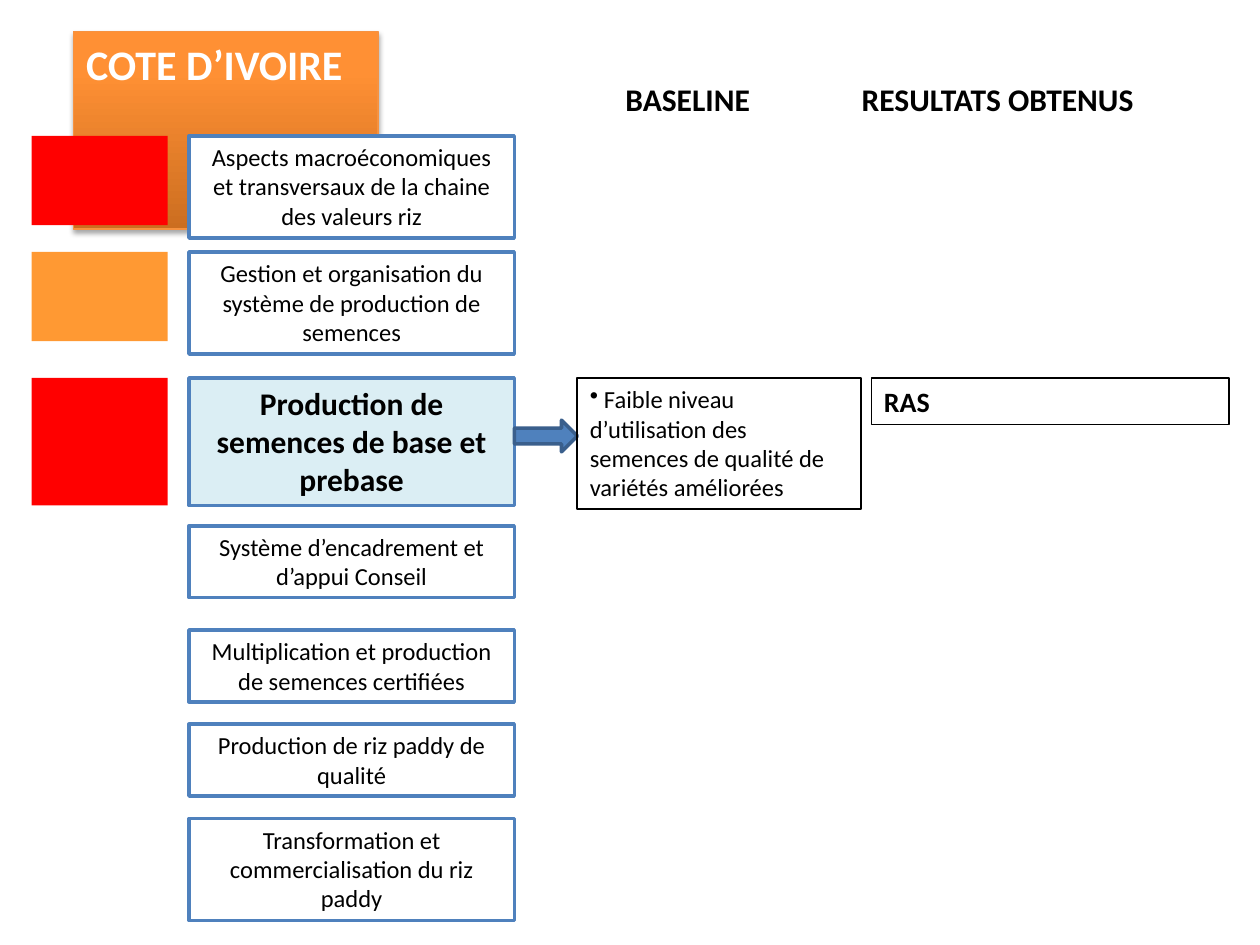
from copy import deepcopy
from lxml import etree
from pptx import Presentation
from pptx.dml.color import RGBColor
from pptx.enum.shapes import MSO_SHAPE
from pptx.enum.text import MSO_ANCHOR, MSO_AUTO_SIZE, PP_ALIGN
from pptx.oxml.ns import qn
from pptx.util import Cm, Pt

RECT, ARROW = MSO_SHAPE.RECTANGLE, MSO_SHAPE.RIGHT_ARROW
LEFT, CENTER = PP_ALIGN.LEFT, PP_ALIGN.CENTER
TOP, GROW = MSO_ANCHOR.TOP, MSO_AUTO_SIZE.SHAPE_TO_FIT_TEXT

BLACK = RGBColor(0x00, 0x00, 0x00)
WHITE = RGBColor(0xFF, 0xFF, 0xFF)
RED = RGBColor(0xFF, 0x00, 0x00)
AMBER = RGBColor(0xFF, 0x99, 0x33)
BLUE = RGBColor(0x4F, 0x81, 0xBD)
NAVY = RGBColor(0x3A, 0x5F, 0x8C)
PALE = RGBColor(0xDB, 0xEE, 0xF4)
RIM = RGBColor(0xF6, 0x92, 0x40)
BLEND = [(0, RGBColor(0xCC, 0x6E, 0x20)),
         (0.8, RGBColor(0xFF, 0x90, 0x34)),
         (1, RGBColor(0xFF, 0x91, 0x36))]

# Content
TITLE = "COTE D’IVOIRE"
# Themes: text, top, height, flag colour, flag height (cm)
THEMES = [
    ("Aspects macroéconomiques et transversaux de la chaine des valeurs riz",
     2.74, 2.06, RED, 1.8),
    ("Gestion et organisation du système de production de semences",
     5.08, 2.06, AMBER, 1.8),
    ("Production de semences de base et prebase", 7.62, 2.57, RED, 2.57),
    ("Système d’encadrement et d’appui Conseil", 10.6, 1.45, None, 0),
    ("Multiplication et production de semences certifiées",
     12.7, 1.45, None, 0),
    ("Production de riz paddy de qualité", 14.6, 1.45, None, 0),
    ("Transformation et commercialisation du riz paddy",
     16.5, 2.06, None, 0),
]
FOCUS = 2
# Heads: text, left, width (cm)
HEADS = [("BASELINE", 11.64, 4.45), ("RESULTATS OBTENUS", 16.09, 8.04)]
BASE = " Faible niveau d’utilisation des semences de qualité de variétés améliorées"
RESULT = "RAS"

# Text formats
BODY = {"name": "Calibri", "size": Pt(14), "bold": False}
STRONG = {**BODY, "size": Pt(18), "bold": True}
MID = {**STRONG, "size": Pt(16)}
BIG = {**STRONG, "size": Pt(24)}


def write(shape, text, form, align=LEFT, color=BLACK):
    frame = shape.text_frame
    frame.word_wrap = True
    frame.auto_size = GROW
    frame.vertical_anchor = TOP
    para = frame.paragraphs[0]
    para.alignment = align
    run = para.add_run()
    run.text = text
    for key, value in form.items():
        setattr(run.font, key, value)
    run.font.color.rgb = color
    return para


def box(slide, area, fill=None, line=None, width=1, kind=RECT):
    shape = slide.shapes.add_shape(kind, *map(Cm, area))
    shape.shadow.inherit = False
    if fill is None:
        shape.fill.background()
    else:
        shape.fill.solid()
        shape.fill.fore_color.rgb = fill
    if line is None:
        shape.line.fill.background()
    else:
        shape.line.color.rgb = line
        shape.line.width = Pt(width)
    return shape


def banner(shape):
    shape.left, shape.top, shape.width, shape.height = map(
        Cm, (1.48, 0.64, 6.14, 1.28))
    write(shape, TITLE, BIG, color=WHITE)
    # Three-stop blend, dark at the foot
    shape.fill.gradient()
    shape.fill.gradient_angle = 90
    stops = shape.element.find(".//" + qn("a:gsLst"))
    stops.append(deepcopy(stops[-1]))
    for stop, (place, color) in zip(shape.fill.gradient_stops, BLEND):
        stop.position = place
        stop.color.rgb = color
    shape.line.color.rgb = RIM
    shape.line.width = Pt(0.75)
    # Soft shadow below
    shape.shadow.inherit = False
    effect = shape.element.find(".//" + qn("a:effectLst"))
    shade = etree.SubElement(effect, qn("a:outerShdw"), blurRad="40000",
                             dist="23000", dir="5400000", rotWithShape="0")
    tone = etree.SubElement(shade, qn("a:srgbClr"), val="000000")
    etree.SubElement(tone, qn("a:alpha"), val="35000")


def main():
    deck = Presentation()
    deck.slide_width, deck.slide_height = Cm(25.4), Cm(19.05)
    slide = deck.slides.add_slide(deck.slide_layouts[5])
    banner(slide.shapes.title)

    # Themes and their flags
    for i, (text, top, high, flag, tall) in enumerate(THEMES):
        hot = i == FOCUS
        card = box(slide, (3.81, top, 6.56, high),
                   PALE if hot else WHITE, BLUE, 2)
        write(card, text, STRONG if hot else BODY, CENTER)
        if flag is not None:
            box(slide, (0.64, top, 2.74, tall), flag)

    # Column heads
    for text, left, wide in HEADS:
        head = slide.shapes.add_textbox(Cm(left), Cm(1.48), Cm(wide), Cm(1.03))
        write(head, text, STRONG, CENTER)

    # Details of the focus theme
    row = THEMES[FOCUS][1]
    box(slide, (10.37, row + 0.85, 1.27, 0.64), BLUE, NAVY, 2, ARROW)
    para = write(box(slide, (11.64, row, 5.72, 2.65), line=BLACK), BASE, BODY)
    props = para.runs[0].font._element.getparent().getparent().get_or_add_pPr()
    etree.SubElement(props, qn("a:buChar"), char="•")
    write(box(slide, (17.57, row, 7.2, 0.94), line=BLACK), RESULT, MID)

    deck.save("out.pptx")


if __name__ == "__main__":
    main()
